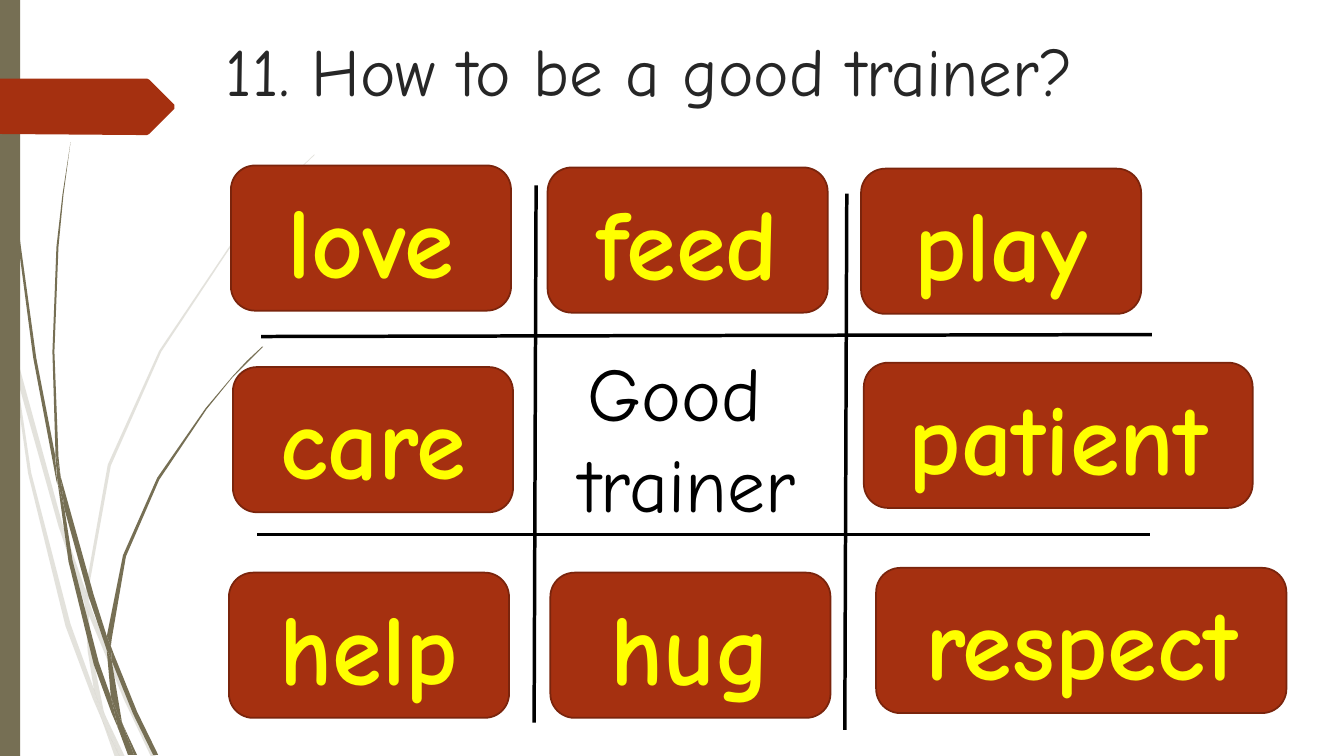
from dataclasses import dataclass

from lxml.etree import SubElement
from pptx import Presentation
from pptx.dml.color import RGBColor
from pptx.enum.shapes import MSO_CONNECTOR, MSO_SHAPE
from pptx.enum.text import MSO_ANCHOR, MSO_AUTO_SIZE, PP_ALIGN
from pptx.oxml.ns import qn
from pptx.shapes.autoshape import Shape
from pptx.shapes.shapetree import GroupShapes, SlideShapes
from pptx.util import Cm, Pt

FONT = "Comic Neue"
OLIVE = RGBColor(0x76, 0x6F, 0x54)
RUST = RGBColor(0xA5, 0x30, 0x10)
DARK_RUST = RGBColor(0x7A, 0x24, 0x0C)
YELLOW = RGBColor(0xFF, 0xFF, 0x00)
BLACK = RGBColor(0, 0, 0)
CHARCOAL = RGBColor(0x26, 0x26, 0x26)

OUTLINE_UNIT = 2.54  # cm per unit of the outlines below
CARD_WIDTH, CARD_HEIGHT = 7.06, 3.66

Outline = tuple[tuple[float, float], ...]


@dataclass(frozen=True)
class Tuft:
    """Grass blades that share one opacity, in percent."""
    opacity: int
    blades: tuple[Outline, ...]


@dataclass(frozen=True)
class Card:
    word: str
    left: float
    top: float
    width: float = CARD_WIDTH


@dataclass(frozen=True)
class GridLine:
    x1: float
    y1: float
    x2: float
    y2: float


PALE_TUFT = Tuft(20, (
    ((0.11, 3.5), (0.09, 3.22), (0, 2.82), (0, 2.99), (0.1, 3.44)),
    ((0.58, 5.22), (0.84, 5.99), (0.85, 5.86), (0.62, 5.2), (0.14, 3.45), (0.17, 3.76)),
    ((0.92, 6.07), (0.88, 5.96), (0.88, 6.1), (1.23, 6.94), (1.5, 7.51), (1.55, 7.51),
     (1.27, 6.92)),
    ((1.19, 7.51), (1.24, 7.51), (1.05, 7.11)),
    ((0.93, 6.83), (0.7, 6.19), (0.31, 4.69), (0.17, 3.76), (0.11, 3.5), (0.28, 4.7),
     (0.65, 6.21), (0.92, 6.93), (1.01, 7.14), (0.99, 7.07)),
    ((0.84, 5.99), (0.87, 6.46), (0.93, 6.83), (0.96, 6.92), (1.05, 7.11), (1.03, 7.06),
     (0.91, 6.46), (0.88, 6.1), (0.88, 6.08)),
    ((0.88, 5.84), (1.1, 4.62), (1.6, 3.49), (2.29, 2.45), (2.68, 1.98), (2.9, 1.75),
     (3.12, 1.54), (3.12, 1.53), (2.89, 1.75), (2.68, 1.97), (2.28, 2.44), (1.58, 3.48),
     (1.07, 4.61), (0.85, 5.84), (0.85, 5.86), (0.88, 5.96)),
    ((1.01, 7.14), (1.14, 7.51), (1.19, 7.51)),
    ((0.88, 6.08), (0.88, 6.1), (0.88, 5.96), (0.85, 5.86), (0.84, 5.99)),
    ((0.96, 6.92), (0.93, 6.83), (0.99, 7.07), (1.01, 7.14), (1.19, 7.51), (1.05, 7.11)),
))

DARK_TUFT = Tuft(100, (
    ((0.07, 1.1), (0.17, 2.33), (0.33, 3.55), (0.56, 4.77), (0.57, 4.81), (0.55, 4.57),
     (0.55, 4.53), (0.36, 3.55), (0.19, 2.32), (0.08, 1.09), (0.05, 0.48), (0.03, 0),
     (0.03, 0.48)),
    ((0.88, 5.92), (1.06, 6.45), (1.06, 6.33), (1.06, 6.31), (0.93, 5.9), (0.6, 4.72),
     (0.64, 5.05)),
    ((1.13, 6.49), (1.1, 6.41), (1.11, 6.56), (1.32, 7.08), (1.52, 7.49), (1.57, 7.49),
     (1.36, 7.06)),
    ((1.1, 6.91), (0.98, 6.57), (0.72, 5.56), (0.64, 5.05), (0.57, 4.77), (0.68, 5.57),
     (0.93, 6.59), (1.11, 7.08), (1.17, 7.22), (1.16, 7.17)),
    ((0.6, 4.72), (0.58, 4.53), (0.54, 3.49), (0.58, 2.45), (0.63, 1.93), (0.7, 1.41),
     (0.62, 1.93), (0.56, 2.45), (0.52, 3.49), (0.55, 4.49)),
    ((1.33, 7.49), (1.36, 7.49), (1.22, 7.19)),
    ((0.57, 4.77), (0.64, 5.05), (0.6, 4.72), (0.55, 4.49), (0.55, 4.53)),
    ((1.11, 6.33), (1.25, 5.52), (1.58, 4.76), (2.05, 4.06), (2.31, 3.74), (2.46, 3.59),
     (2.61, 3.44), (2.6, 3.44), (2.45, 3.58), (2.31, 3.73), (2.04, 4.05), (1.56, 4.74),
     (1.22, 5.51), (1.06, 6.31), (1.1, 6.41)),
    ((1.17, 7.22), (1.27, 7.49), (1.31, 7.49)),
    ((1.06, 6.45), (1.1, 6.91), (1.16, 7.06), (1.22, 7.19), (1.21, 7.16), (1.11, 6.56),
     (1.09, 6.51)),
    ((1.06, 6.45), (1.09, 6.51), (1.11, 6.56), (1.1, 6.41), (1.06, 6.31), (1.06, 6.33)),
    ((1.16, 7.06), (1.1, 6.91), (1.16, 7.17), (1.17, 7.22), (1.3, 7.49), (1.33, 7.49),
     (1.22, 7.19)),
))

ARROW_TAB: Outline = (
    (1.73, 1.08), (1.48, 1.33), (1.46, 1.34), (1.36, 1.34), (-0.01, 1.33), (0, 0.78),
    (1.36, 0.78), (1.46, 0.78), (1.48, 0.79), (1.73, 1.04))

GRID_LINES = (
    GridLine(6.58, 8.48, 29.03, 8.43),
    GridLine(6.48, 13.47, 28.98, 13.47),
    GridLine(13.51, 4.67, 13.46, 18.21),
    GridLine(21.34, 4.88, 21.29, 18.39),
)

CARDS = (
    Card("love", 5.82, 4.17),
    Card("care", 5.87, 9.25),
    Card("help", 5.77, 14.43),
    Card("feed", 13.8, 4.22),
    Card("hug", 13.87, 14.43),
    Card("play", 21.7, 4.25),
    Card("patient", 21.77, 9.14, 9.8),
    Card("respect", 22.08, 14.31, 10.34),
)


def paint(shape: Shape, colour: RGBColor) -> None:
    shape.shadow.inherit = False
    shape.fill.solid()
    shape.fill.fore_color.rgb = colour
    shape.line.fill.background()


def write(shape: Shape, text: str, size: int, colour: RGBColor,
          align: PP_ALIGN = PP_ALIGN.CENTER, bold: bool = False) -> None:
    shape.text_frame.text = text
    for paragraph in shape.text_frame.paragraphs:
        paragraph.alignment = align
        for run in paragraph.runs:
            run.font.name, run.font.size, run.font.bold = FONT, Pt(size), bold
            run.font.color.rgb = colour


def draw_outline(shapes: SlideShapes | GroupShapes, outline: Outline,
                 colour: RGBColor) -> Shape:
    corners = [(Cm(x * OUTLINE_UNIT), Cm(y * OUTLINE_UNIT)) for x, y in outline]
    builder = shapes.build_freeform(*corners[0])
    builder.add_line_segments(corners[1:])
    figure = builder.convert_to_shape()
    paint(figure, colour)
    return figure


def draw_tuft(shapes: SlideShapes, tuft: Tuft) -> None:
    members = shapes.add_group_shape().shapes
    for outline in tuft.blades:
        blade = draw_outline(members, outline, OLIVE)
        if tuft.opacity < 100:
            tint = blade._element.spPr.find(qn("a:solidFill"))[0]
            SubElement(tint, qn("a:alpha"), val=str(tuft.opacity * 1000))


def draw_grid_line(shapes: GroupShapes, line: GridLine) -> None:
    rule = shapes.add_connector(MSO_CONNECTOR.STRAIGHT, Cm(line.x1), Cm(line.y1),
                                Cm(line.x2), Cm(line.y2))
    rule.line.color.rgb = BLACK
    rule.line.width = Pt(2.5)
    SubElement(rule._element.spPr, qn("a:effectLst"))


def draw_card(shapes: SlideShapes, card: Card) -> None:
    tile = shapes.add_shape(MSO_SHAPE.ROUNDED_RECTANGLE, Cm(card.left), Cm(card.top),
                            Cm(card.width), Cm(CARD_HEIGHT))
    paint(tile, RUST)
    tile.line.color.rgb = DARK_RUST
    tile.line.width = Pt(1.25)
    tile.text_frame.vertical_anchor = MSO_ANCHOR.MIDDLE
    write(tile, card.word, 72, YELLOW, bold=True)


def main() -> None:
    deck = Presentation()
    deck.slide_width, deck.slide_height = Cm(33.87), Cm(19.05)
    shapes = deck.slides.add_slide(deck.slide_layouts[5]).shapes

    # Grass, side bar and arrow tab
    for tuft in (PALE_TUFT, DARK_TUFT):
        draw_tuft(shapes, tuft)
    side_bar = shapes.add_shape(MSO_SHAPE.RECTANGLE, 0, 0, Cm(0.51), Cm(19.05))
    paint(side_bar, OLIVE)
    draw_outline(shapes, ARROW_TAB, RUST)

    # Title
    heading = shapes.title
    heading.left, heading.top, heading.width, heading.height = (
        Cm(5.44), Cm(0.61), Cm(24.77), Cm(3.56))
    heading.text_frame.vertical_anchor = MSO_ANCHOR.TOP
    write(heading, "11. How to be a good trainer?", 48, CHARCOAL, PP_ALIGN.LEFT)

    # Word grid around the centre topic
    grid = shapes.add_group_shape().shapes
    for line in GRID_LINES:
        draw_grid_line(grid, line)
    topic = shapes.add_textbox(Cm(13.89), Cm(8.59), Cm(6.86), Cm(4.88))
    topic.text_frame.word_wrap = False
    topic.text_frame.auto_size = MSO_AUTO_SIZE.SHAPE_TO_FIT_TEXT
    write(topic, "Good \ntrainer", 54, BLACK)
    for card in CARDS:
        draw_card(shapes, card)

    deck.save("out.pptx")


if __name__ == "__main__":
    main()
